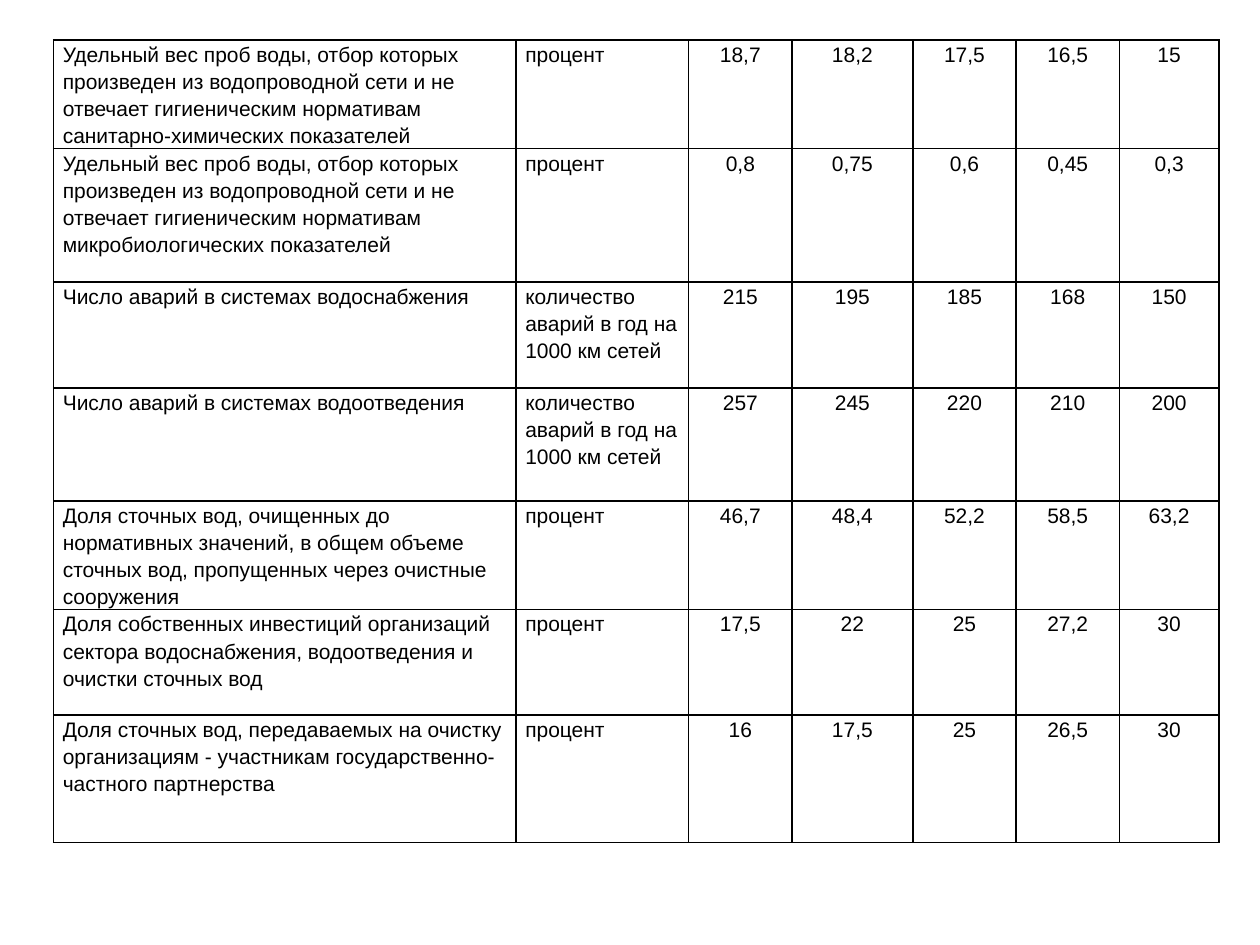
import pptx
import pptx.dml.color
import pptx.enum.text
import pptx.oxml
import pptx.oxml.ns
import pptx.util
from lxml import etree

Pt = pptx.util.Pt
COLORS = {"text": "000000", "border": "000000"}

PERCENT = "процент"
ACCIDENTS = "количество аварий в год на 1000 км сетей"

# Row height, indicator, unit, yearly values
INDICATORS = [
    (58.3, "Удельный вес проб воды, отбор которых произведен из водопроводной сети и не "
     "отвечает гигиеническим нормативам санитарно-химических показателей",
     PERCENT, ["18,7", "18,2", "17,5", "16,5", "15"]),
    (76.3, "Удельный вес проб воды, отбор которых произведен из водопроводной сети и не "
     "отвечает гигиеническим нормативам микробиологических показателей",
     PERCENT, ["0,8", "0,75", "0,6", "0,45", "0,3"]),
    (60.5, "Число аварий в системах водоснабжения",
     ACCIDENTS, ["215", "195", "185", "168", "150"]),
    (64.8, "Число аварий в системах водоотведения",
     ACCIDENTS, ["257", "245", "220", "210", "200"]),
    (60.5, "Доля сточных вод, очищенных до нормативных значений, в общем объеме "
     "сточных вод, пропущенных через очистные сооружения",
     PERCENT, ["46,7", "48,4", "52,2", "58,5", "63,2"]),
    (60.5, "Доля собственных инвестиций организаций сектора водоснабжения, "
     "водоотведения и очистки сточных вод",
     PERCENT, ["17,5", "22", "25", "27,2", "30"]),
    (72.7, "Доля сточных вод, передаваемых на очистку организациям - участникам "
     "государственно-частного партнерства",
     PERCENT, ["16", "17,5", "25", "26,5", "30"]),
]
COLUMN_WIDTHS = [264.3, 98.6, 59, 69.1, 59, 59, 56.9]
TABLE_LEFT, TABLE_TOP = 30.7, 23


def add_borders(cell):
    properties = cell._tc.get_or_add_tcPr()
    for position, side in enumerate(("lnL", "lnR", "lnT", "lnB")):
        line = etree.Element(pptx.oxml.ns.qn("a:" + side), w=str(Pt(1)))
        fill = etree.SubElement(line, pptx.oxml.ns.qn("a:solidFill"))
        etree.SubElement(fill, pptx.oxml.ns.qn("a:srgbClr"), val=COLORS["border"])
        properties.insert(position, line)


def fill_cell(cell, text, centered):
    cell.text = text
    cell.fill.background()
    cell.margin_left = cell.margin_right = Pt(5.2)
    cell.margin_top = cell.margin_bottom = 0
    paragraph = cell.text_frame.paragraphs[0]
    paragraph.line_spacing = 1.15
    paragraph.space_after = Pt(10)
    if centered:
        paragraph.alignment = pptx.enum.text.PP_ALIGN.CENTER
    paragraph.font.name = "Arial"
    paragraph.font.size = Pt(12)
    paragraph.font.color.rgb = pptx.dml.color.RGBColor.from_string(COLORS["text"])
    add_borders(cell)


def main():
    presentation = pptx.Presentation()
    presentation.slide_width, presentation.slide_height = Pt(720), Pt(540)
    slide = presentation.slides.add_slide(presentation.slide_layouts[6])
    total_height = sum(indicator[0] for indicator in INDICATORS)
    table = slide.shapes.add_table(
        len(INDICATORS), len(COLUMN_WIDTHS), Pt(TABLE_LEFT), Pt(TABLE_TOP),
        Pt(sum(COLUMN_WIDTHS)), Pt(total_height)).table
    table.first_row = table.horz_banding = False
    for column, width in zip(table.columns, COLUMN_WIDTHS):
        column.width = Pt(width)
    for row, (height, name, unit, values) in zip(table.rows, INDICATORS):
        row.height = Pt(height)
        for index, (cell, text) in enumerate(zip(row.cells, [name, unit, *values])):
            fill_cell(cell, text, centered=index >= 2)
    presentation.save("out.pptx")


if __name__ == "__main__":
    main()
